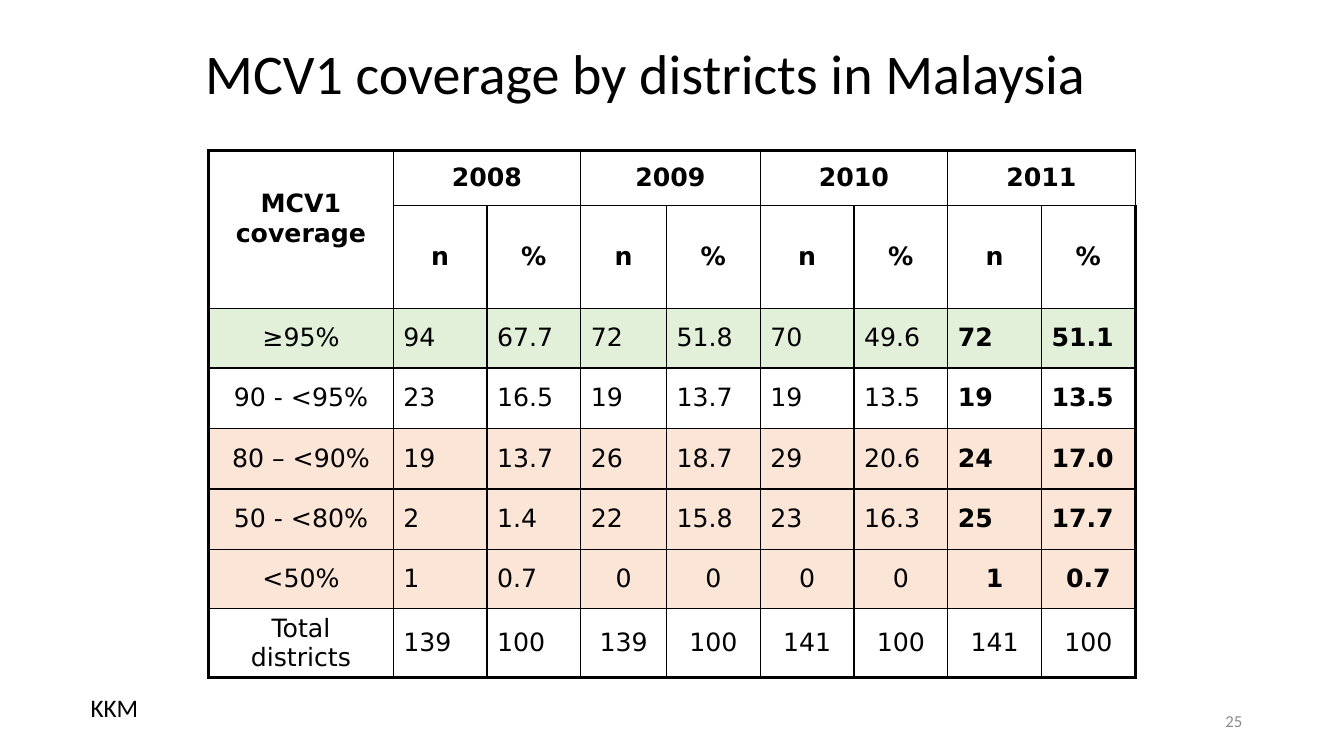
from dataclasses import dataclass
from lxml.etree import SubElement
from pptx import Presentation
from pptx.dml.color import RGBColor
from pptx.enum.text import MSO_ANCHOR, PP_ALIGN
from pptx.oxml.ns import qn
from pptx.slide import Slide
from pptx.table import Table, _Cell
from pptx.util import Emu, Pt

BLACK = RGBColor(0x00, 0x00, 0x00)
GREY = RGBColor(0x8C, 0x8C, 0x8C)
WHITE = RGBColor(0xFF, 0xFF, 0xFF)
GREEN = RGBColor(0xE2, 0xF0, 0xD9)
PEACH = RGBColor(0xFB, 0xE5, 0xD6)

EMU_PER_PX = 9144
COLUMN_WIDTHS = [183, 93, 93, 85, 93, 93, 93, 93, 93]
HEADER_HEIGHTS = [55, 102]
YEARS = ["2008", "2009", "2010", "2011"]
THIN, THICK = 1, 2.25


@dataclass(frozen=True)
class Label:
    text: str
    left: int
    top: int
    width: int
    height: int
    size: int
    color: RGBColor = BLACK
    align: PP_ALIGN = PP_ALIGN.LEFT
    anchor: MSO_ANCHOR = MSO_ANCHOR.MIDDLE
    wrap: bool = True
    line_spacing: float = 1.0


@dataclass(frozen=True)
class CoverageRow:
    values: list[str]
    height: int
    fill: RGBColor | None
    centered_from: int = 9
    bold_from: int = 7


LABELS = [
    Label("MCV1 coverage by districts in Malaysia", 93, 30, 1094, 91, 40,
          align=PP_ALIGN.CENTER, line_spacing=0.9),
    Label("KKM", 80, 682, 68, 40, 18, anchor=MSO_ANCHOR.TOP, wrap=False),
    Label("25", 942, 695, 300, 40, 12, GREY, PP_ALIGN.RIGHT),
]

COVERAGE = [
    CoverageRow(["≥95%", "94", "67.7", "72", "51.8", "70", "49.6", "72", "51.1"], 59, GREEN),
    CoverageRow(["90 - <95%", "23", "16.5", "19", "13.7", "19", "13.5", "19", "13.5"], 60, None),
    CoverageRow(["80 – <90%", "19", "13.7", "26", "18.7", "29", "20.6", "24", "17.0"], 60, PEACH),
    CoverageRow(["50 - <80%", "2", "1.4", "22", "15.8", "23", "16.3", "25", "17.7"], 60, PEACH),
    CoverageRow(["<50%", "1", "0.7", "0", "0", "0", "0", "1", "0.7"], 59, PEACH, centered_from=3),
    CoverageRow(["Total districts", "139", "100", "139", "100", "141", "100", "141", "100"],
                68, WHITE, centered_from=3, bold_from=9),
]


def px(length: int) -> Emu:
    return Emu(length * EMU_PER_PX)


def add_label(page: Slide, label: Label) -> None:
    box = page.shapes.add_textbox(
        px(label.left), px(label.top), px(label.width), px(label.height))
    frame = box.text_frame
    frame.text = label.text
    frame.word_wrap = label.wrap
    frame.vertical_anchor = label.anchor
    para = frame.paragraphs[0]
    para.alignment = label.align
    para.line_spacing = label.line_spacing
    para.font.name = "Calibri"
    para.font.size = Pt(label.size)
    para.font.color.rgb = label.color


def set_borders(cell: _Cell, row: int, column: int, last_row: int) -> None:
    properties = cell._tc.get_or_add_tcPr()
    edges = {
        "a:lnL": column == 0,
        "a:lnR": column == len(COLUMN_WIDTHS) - 1,
        "a:lnT": row == 0,
        "a:lnB": row == last_row,
    }
    for tag, outer in edges.items():
        width = Pt(THICK if outer else THIN)
        line = SubElement(properties, qn(tag), w=str(width))
        solid = SubElement(line, qn("a:solidFill"))
        SubElement(solid, qn("a:srgbClr"), val=str(BLACK))


def set_fill(cell: _Cell, color: RGBColor | None) -> None:
    if color is None:
        cell.fill.background()
    else:
        cell.fill.solid()
        cell.fill.fore_color.rgb = color


def write_cell(cell: _Cell, text: str, bold: bool, centered: bool) -> None:
    cell.text_frame.text = text
    cell.vertical_anchor = MSO_ANCHOR.MIDDLE
    para = cell.text_frame.paragraphs[0]
    para.alignment = PP_ALIGN.CENTER if centered else PP_ALIGN.LEFT
    para.font.name = "DejaVu Sans"
    para.font.size = Pt(18)
    para.font.bold = bold
    para.font.color.rgb = BLACK


def write_header(table: Table) -> None:
    corner = table.cell(0, 0)
    corner.merge(table.cell(1, 0))
    write_cell(corner, "MCV1 coverage", True, True)
    corner.vertical_anchor = MSO_ANCHOR.TOP
    corner.margin_top = px(39)
    for index, year in enumerate(YEARS):
        column = 1 + 2 * index
        table.cell(0, column).merge(table.cell(0, column + 1))
        write_cell(table.cell(0, column), year, True, True)
        for offset, unit in enumerate(["n", "%"]):
            write_cell(table.cell(1, column + offset), unit, True, True)


def add_coverage_table(page: Slide) -> None:
    heights = HEADER_HEIGHTS + [entry.height for entry in COVERAGE]
    fills = [WHITE] * len(HEADER_HEIGHTS) + [entry.fill for entry in COVERAGE]
    table = page.shapes.add_table(
        len(heights), len(COLUMN_WIDTHS), px(207), px(149),
        px(sum(COLUMN_WIDTHS)), px(sum(heights))).table
    table.first_row = False
    table.horz_banding = False
    for column, width in enumerate(COLUMN_WIDTHS):
        table.columns[column].width = px(width)
    for row, height in enumerate(heights):
        table.rows[row].height = px(height)
        for column in range(len(COLUMN_WIDTHS)):
            cell = table.cell(row, column)
            set_borders(cell, row, column, len(heights) - 1)
            set_fill(cell, fills[row])
    write_header(table)
    for row, entry in enumerate(COVERAGE, start=len(HEADER_HEIGHTS)):
        for column, value in enumerate(entry.values):
            centered = column == 0 or column >= entry.centered_from
            write_cell(table.cell(row, column), value, column >= entry.bold_from, centered)


def main() -> None:
    deck = Presentation()
    deck.slide_width = px(1333)
    deck.slide_height = px(750)
    page = deck.slides.add_slide(deck.slide_layouts[6])
    add_coverage_table(page)
    for label in LABELS:
        add_label(page, label)
    deck.save("out.pptx")


if __name__ == "__main__":
    main()
